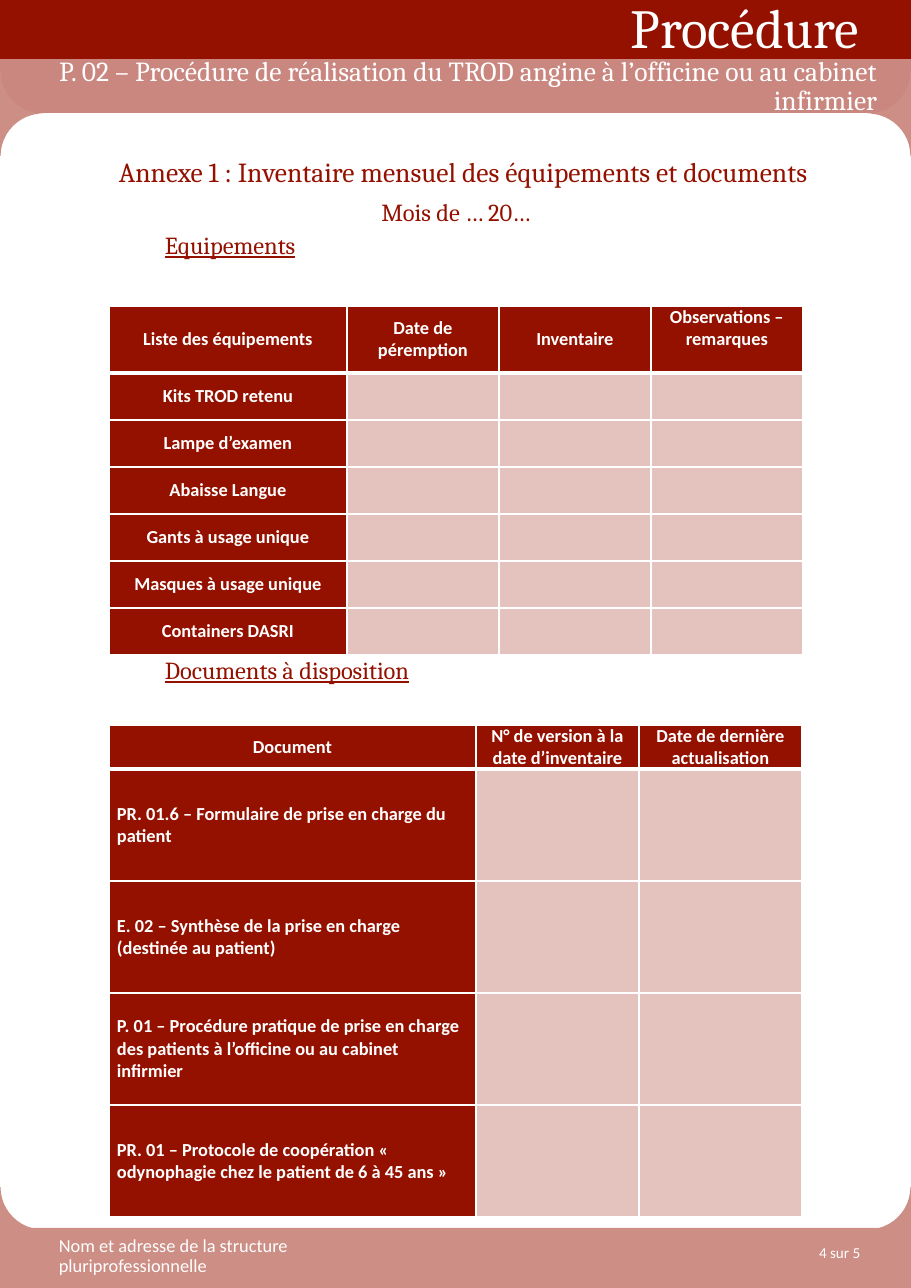
from lxml import etree
from pptx import Presentation
from pptx.dml.color import RGBColor
from pptx.enum.shapes import MSO_SHAPE
from pptx.enum.text import MSO_ANCHOR, PP_ALIGN
from pptx.oxml.ns import qn
from pptx.util import Emu, Pt

PX = 8298
RECTANGLE, PLAQUE = MSO_SHAPE.RECTANGLE, MSO_SHAPE.PLAQUE
TOP, MIDDLE = MSO_ANCHOR.TOP, MSO_ANCHOR.MIDDLE
LEFT, CENTER, RIGHT = PP_ALIGN.LEFT, PP_ALIGN.CENTER, PP_ALIGN.RIGHT
COLORS = {"red": "941100", "rose": "CC8E85", "white": "FFFFFF"}


def paint(fill, color, opacity=100):
    fill.solid()
    fill.fore_color.rgb = RGBColor.from_string(COLORS[color])
    if opacity < 100:
        color_element = fill._xPr.find(qn("a:solidFill"))[0]
        etree.SubElement(color_element, qn("a:alpha"), val=str(opacity * 1000))


def style(paragraph, font_name, size, color, align=LEFT, bold=False):
    paragraph.alignment = align
    for run in paragraph.runs:
        run.font.name = font_name
        run.font.size = Pt(size)
        run.font.bold = bold
        run.font.color.rgb = RGBColor.from_string(COLORS[color])


presentation = Presentation()
presentation.slide_width = Emu(911 * PX)
presentation.slide_height = Emu(1288 * PX)
slide = presentation.slides.add_slide(presentation.slide_layouts[6])

frame_parts = [
    (RECTANGLE, 0, 54, 911, 59, "red", 50),
    (RECTANGLE, 0, 0, 911, 59, "red", 100),
    (RECTANGLE, 0, 1228, 911, 60, "rose", 100),
]
for top in (71, 1187):
    for left in (-48, 868):
        frame_parts.append((PLAQUE, left, top, 91, 85, "rose", 100))
for kind, left, top, width, height, color, opacity in frame_parts:
    shape = slide.shapes.add_shape(kind, left * PX, top * PX, width * PX, height * PX)
    shape.shadow.inherit = False
    shape.line.fill.background()
    paint(shape.fill, color, opacity)
    if kind == PLAQUE:
        shape.adjustments[0] = 0.5

banner_texts = [
    ("Procédure", 620, -12, 291, 78, "Cambria", 36, LEFT, TOP, 1),
    ("P. 02 – Procédure de réalisation du TROD angine à l’officine ou au cabinet infirmier",
     0, 65, 888, 44, "Cambria", 18, RIGHT, MIDDLE, 0.9),
    ("Nom et adresse de la structure pluriprofessionnelle",
     48, 1231, 298, 53, "Calibri", 12, LEFT, TOP, 0.9),
    ("4 sur 5", 672, 1235, 199, 34, "Calibri", 9.9, RIGHT, MIDDLE, 1),
]
for text, left, top, width, height, font_name, size, align, anchor, spacing in banner_texts:
    text_frame = slide.shapes.add_textbox(left * PX, top * PX, width * PX, height * PX).text_frame
    text_frame.word_wrap = True
    text_frame.vertical_anchor = anchor
    text_frame.text = text
    text_frame.paragraphs[0].line_spacing = spacing
    style(text_frame.paragraphs[0], font_name, size, "white", align)

heading_blocks = [
    (153, 120, [
        ("Annexe 1 : Inventaire mensuel des équipements et documents", 18, 45, LEFT, 4.1, False),
        ("Mois de … 20…", 16, 0, CENTER, 8.3, False),
        ("Equipements", 16, 91, LEFT, 4.1, True),
    ]),
    (653, 40, [("Documents à disposition", 16, 91, LEFT, 4.1, True)]),
]
for top, height, headings in heading_blocks:
    text_frame = slide.shapes.add_textbox(63 * PX, top * PX, 786 * PX, height * PX).text_frame
    text_frame.word_wrap = True
    text_frame.text = "\n".join(heading[0] for heading in headings)
    for paragraph, heading in zip(text_frame.paragraphs, headings):
        text, size, indent, align, space_before, underlined = heading
        style(paragraph, "Cambria", size, "red", align)
        paragraph.line_spacing = 0.9
        paragraph.space_before = Pt(space_before)
        paragraph.runs[0].font.underline = underlined
        paragraph._p.get_or_add_pPr().set("marL", str(indent * PX))

tables = [
    (306, [238, 152, 152, 152], 67, 47, CENTER,
     ["Liste des équipements", "Date de péremption", "Inventaire", "Observations – remarques"],
     ["Kits TROD retenu", "Lampe d’examen", "Abaisse Langue", "Gants à usage unique",
      "Masques à usage unique", "Containers DASRI"]),
    (725, [367, 163, 163], 44, 112, LEFT,
     ["Document", "N° de version à la date d’inventaire", "Date de dernière actualisation"],
     ["PR. 01.6 – Formulaire de prise en charge du patient",
      "E. 02 – Synthèse de la prise en charge (destinée au patient)",
      "P. 01 – Procédure pratique de prise en charge des patients à l’officine ou au cabinet infirmier",
      "PR. 01 – Protocole de coopération « odynophagie chez le patient de 6 à 45 ans »"]),
]
for top, widths, header_height, row_height, label_align, headers, labels in tables:
    heights = [header_height] + [row_height] * len(labels)
    table = slide.shapes.add_table(
        len(heights), len(widths), 109 * PX, top * PX, sum(widths) * PX, sum(heights) * PX
    ).table
    table.first_col = True
    for column, width in zip(table.columns, widths):
        column.width = Emu(width * PX)
    for row_index, height in enumerate(heights):
        table.rows[row_index].height = Emu(height * PX)
        for column_index in range(len(widths)):
            cell = table.cell(row_index, column_index)
            cell.margin_left = cell.margin_right = Emu(8 * PX)
            cell.margin_top = cell.margin_bottom = 0
            cell.vertical_anchor = MIDDLE
            for side in ("lnL", "lnR", "lnT", "lnB"):
                thick = (row_index, side) in ((0, "lnB"), (1, "lnT"))
                border = etree.SubElement(cell._tc.get_or_add_tcPr(), qn("a:" + side),
                                          w=str(Pt(3 if thick else 1)))
                border_fill = etree.SubElement(border, qn("a:solidFill"))
                etree.SubElement(border_fill, qn("a:srgbClr"), val=COLORS["white"])
            if row_index and column_index:
                paint(cell.fill, "red", 25)
                continue
            paint(cell.fill, "red")
            cell.text = labels[row_index - 1] if row_index else headers[column_index]
            align = label_align if row_index else CENTER
            style(cell.text_frame.paragraphs[0], "Calibri", 12, "white", align, True)
            if cell.text == "Observations – remarques":
                cell.vertical_anchor = TOP

presentation.save("out.pptx")
